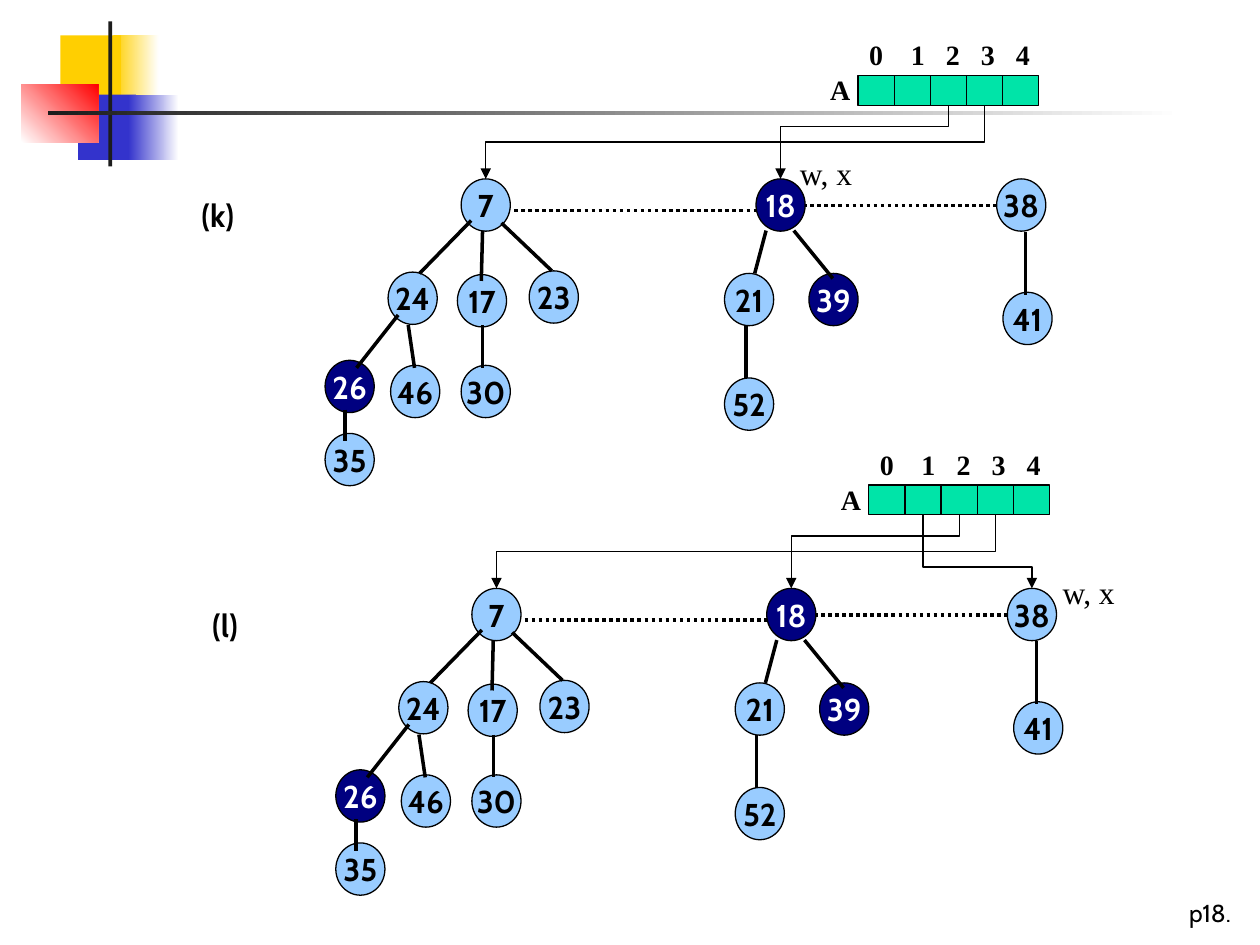
from dataclasses import dataclass

from lxml.etree import SubElement
from pptx import Presentation
from pptx.dml.color import RGBColor
from pptx.enum.dml import MSO_LINE
from pptx.enum.shapes import MSO_CONNECTOR, MSO_SHAPE
from pptx.enum.text import MSO_ANCHOR, PP_ALIGN
from pptx.oxml.ns import qn
from pptx.util import Inches, Pt


@dataclass(frozen=True)
class Theme:
    sans: str = "Cabin"
    serif: str = "Times New Roman"
    black: str = "000000"
    white: str = "FFFFFF"
    ink: str = "1C1C1C"
    yellow: str = "FFCF01"
    blue: str = "3333CC"
    red: str = "FF0000"
    cell: str = "00E4A8"
    node: str = "99CCFF"
    marked: str = "000080"
    key_size: int = 18
    index_size: int = 16
    page_size: int = 14
    thin: float = 0.75
    thick: float = 2


THEME = Theme()
COLUMNS, ROWS = 100, 75
WIDTH, HEIGHT = Inches(10), Inches(7.5)


def across(columns):
    return round(columns * WIDTH / COLUMNS)


def down(rows):
    return round(rows * HEIGHT / ROWS)


def write_text(frame, text, *, size, font=THEME.sans, color=THEME.black, bold=False,
               align=PP_ALIGN.LEFT, tabs=()):
    paragraph = frame.paragraphs[0]
    paragraph.alignment = align
    if tabs:
        stops = SubElement(paragraph._p.get_or_add_pPr(), qn("a:tabLst"))
        for stop in tabs:
            SubElement(stops, qn("a:tab"), pos=str(across(stop)), algn="l")
    run = paragraph.add_run()
    run.text = text
    run.font.size, run.font.name, run.font.bold = Pt(size), font, bold
    run.font.color.rgb = RGBColor.from_string(color)


class Board:
    """Draws on a 100 x 75 grid, shifted by the origin of the current part."""

    def __init__(self, slide, theme):
        self.slide, self.theme = slide, theme
        self.start_part()

    def start_part(self, column=0, row=0):
        self.column, self.row = column, row
        self.shapes = self.slide.shapes.add_group_shape().shapes

    def place(self, column, row):
        return across(self.column + column), down(self.row + row)

    def block(self, column, row, width, height, fill, fade=None, angle=0,
              kind=MSO_SHAPE.RECTANGLE, outlined=False):
        shape = self.shapes.add_shape(kind, *self.place(column, row), across(width), down(height))
        shape.shadow.inherit = False
        if fade:
            shape.fill.gradient()
            shape.fill.gradient_angle = angle
            for stop, color in zip(shape.fill.gradient_stops, (fill, fade)):
                stop.color.rgb = RGBColor.from_string(color)
        else:
            shape.fill.solid()
            shape.fill.fore_color.rgb = RGBColor.from_string(fill)
        if outlined:
            shape.line.color.rgb = RGBColor.from_string(self.theme.black)
            shape.line.width = Pt(self.theme.thin)
        else:
            shape.line.fill.background()
        return shape

    def label(self, column, row, width, height, text, **text_format):
        frame = self.shapes.add_textbox(
            *self.place(column, row), across(width), down(height)).text_frame
        frame.word_wrap = False
        write_text(frame, text, **text_format)

    def node(self, column, row, key, marked):
        fill, color = ((self.theme.marked, self.theme.white) if marked
                       else (self.theme.node, self.theme.black))
        frame = self.block(column, row, NODE_WIDTH, NODE_HEIGHT, fill,
                           kind=MSO_SHAPE.OVAL, outlined=True).text_frame
        frame.margin_left = frame.margin_right = frame.margin_top = frame.margin_bottom = 0
        frame.vertical_anchor, frame.word_wrap = MSO_ANCHOR.MIDDLE, False
        write_text(frame, str(key), size=self.theme.key_size, color=color, bold=True,
                   align=PP_ALIGN.CENTER)

    def line(self, start, end, weight, kind=MSO_CONNECTOR.STRAIGHT, dotted=False):
        connector = self.shapes.add_connector(kind, *self.place(*start), *self.place(*end))
        connector.line.color.rgb = RGBColor.from_string(self.theme.black)
        connector.line.width = Pt(weight)
        if dotted:
            connector.line.dash_style = MSO_LINE.ROUND_DOT
        SubElement(connector._element.spPr, qn("a:effectLst"))
        return connector

    def pointer(self, start, end, turn):
        """An elbow arrow that leaves downwards and turns at a share of its drop."""
        middle_x, middle_y = ((a + b) / 2 for a, b in zip(start, end))
        half_run, half_drop = abs(end[0] - start[0]) / 2, (end[1] - start[1]) / 2
        arrow = self.line((middle_x - half_drop, middle_y - half_run),
                          (middle_x + half_drop, middle_y + half_run),
                          self.theme.thin, MSO_CONNECTOR.ELBOW)
        properties = arrow._element.spPr
        frame = properties.find(qn("a:xfrm"))
        rightwards = end[0] > start[0]
        frame.set("rot", str((270 if rightwards else 90) * 60000))
        if rightwards:
            frame.set("flipH", "1")
        guides = properties.find(qn("a:prstGeom")).get_or_add_avLst()
        SubElement(guides, qn("a:gd"), name="adj1", fmla=f"val {round(turn * 100000)}")
        SubElement(properties.find(qn("a:ln")), qn("a:tailEnd"), type="triangle")


# Heap contents, in grid units
NODE_WIDTH, NODE_HEIGHT = 3.9, 4.15
CELL_LEFT, CELL_TOP, CELL_WIDTH, CELL_HEIGHT, CELLS = 68.1, 6, 2.87, 2.35, 5
NODES = {7: (36.6, 14.2), 18: (60, 14.2), 38: (79.1, 14.2),
         24: (30.8, 21.6), 17: (36.3, 21.8), 23: (42, 21.5),
         21: (57.5, 21.7), 39: (64.2, 21.7), 41: (79.6, 23.2),
         26: (25.8, 28.6), 46: (31, 29), 30: (36.6, 29), 52: (57.5, 30), 35: (25.8, 34.4)}
MARKED = {18, 39, 26}
ROOT_LINKS = [((40.8, 16.7), (60.8, 16.7)), ((60.4, 16.3), (79.2, 16.3))]
EDGES = [((37.4, 17.5), (33.3, 21.7)), ((38.3, 18.3), (38.2, 22.3)),
         ((39.8, 17.7), (43.8, 21.5)), ((60.8, 18.3), (59.9, 21.7)),
         ((63, 18.3), (66.1, 22.1)), ((81.4, 18.4), (81.4, 23.4)),
         ((31.6, 25), (28.3, 29.2)), ((32.4, 25.8), (32.9, 29.2)),
         ((38.3, 25.8), (38.3, 29.2)), ((59.2, 25.8), (59.2, 30)),
         ((27.4, 32.5), (27.4, 35))]
TURNS = {7: 0.5, 18: 0.29, 38: 0.71}


def draw_heap(board, caption, origin, pointers, current):
    theme = board.theme
    board.start_part(*origin)
    # Degree array
    index_style = dict(size=theme.index_size, font=theme.serif, bold=True)
    board.label(68, 2.5, 14.8, 3.7, "\t".join(map(str, range(CELLS))),
                tabs=[3.3 + 2.78 * i for i in range(CELLS - 1)], **index_style)
    board.label(64.9, 5.3, 3.6, 3.7, "A", **index_style)
    for i in range(CELLS):
        board.block(CELL_LEFT + i * CELL_WIDTH, CELL_TOP, CELL_WIDTH, CELL_HEIGHT,
                    theme.cell, outlined=True)
    # Trees
    for start, end in ROOT_LINKS:
        board.line(start, end, theme.thick, dotted=True)
    for key, corner in NODES.items():
        board.node(*corner, key, key in MARKED)
    for start, end in EDGES:
        board.line(start, end, theme.thick)
    # Array pointers and captions
    for index, root in pointers.items():
        column, row = NODES[root]
        board.pointer((CELL_LEFT + (index + 0.5) * CELL_WIDTH, CELL_TOP + CELL_HEIGHT),
                      (column + NODE_WIDTH / 2, row), TURNS[root])
    board.label(15, 15.1, 5.8, 4, caption, size=theme.key_size, bold=True)
    board.label(*current, 6.3, 4, "w, x", size=theme.key_size, font=theme.serif)


def main():
    deck = Presentation()
    deck.slide_width, deck.slide_height = WIDTH, HEIGHT
    board = Board(deck.slides.add_slide(deck.slide_layouts[6]), THEME)

    # Corner ornament
    for box in [(9, 2.8, 3.6, 5.2, THEME.yellow, THEME.white),
                (4.8, 2.8, 4.8, 5.2, THEME.yellow),
                (6.2, 7.5, 4.6, 5.2, THEME.blue),
                (10.2, 7.5, 4, 5.2, THEME.blue, THEME.white),
                (1.7, 6.7, 6.1, 4.6, THEME.white, THEME.red, 45),
                (8.6, 1.7, 0.3, 11.5, THEME.ink),
                (3.8, 8.8, 90, 0.3, THEME.ink, THEME.white)]:
        board.block(*box)

    # Page number
    board.label(93.4, 70.8, 6.6, 3.3, "p18.", size=THEME.page_size)

    # The two steps
    draw_heap(board, "(k)", (0, 0), {3: 7, 2: 18}, (62.5, 11.7))
    draw_heap(board, "(l)", (0.85, 32.5), {3: 7, 2: 18, 1: 38}, (82.5, 12.5))
    deck.save("out.pptx")


if __name__ == "__main__":
    main()
